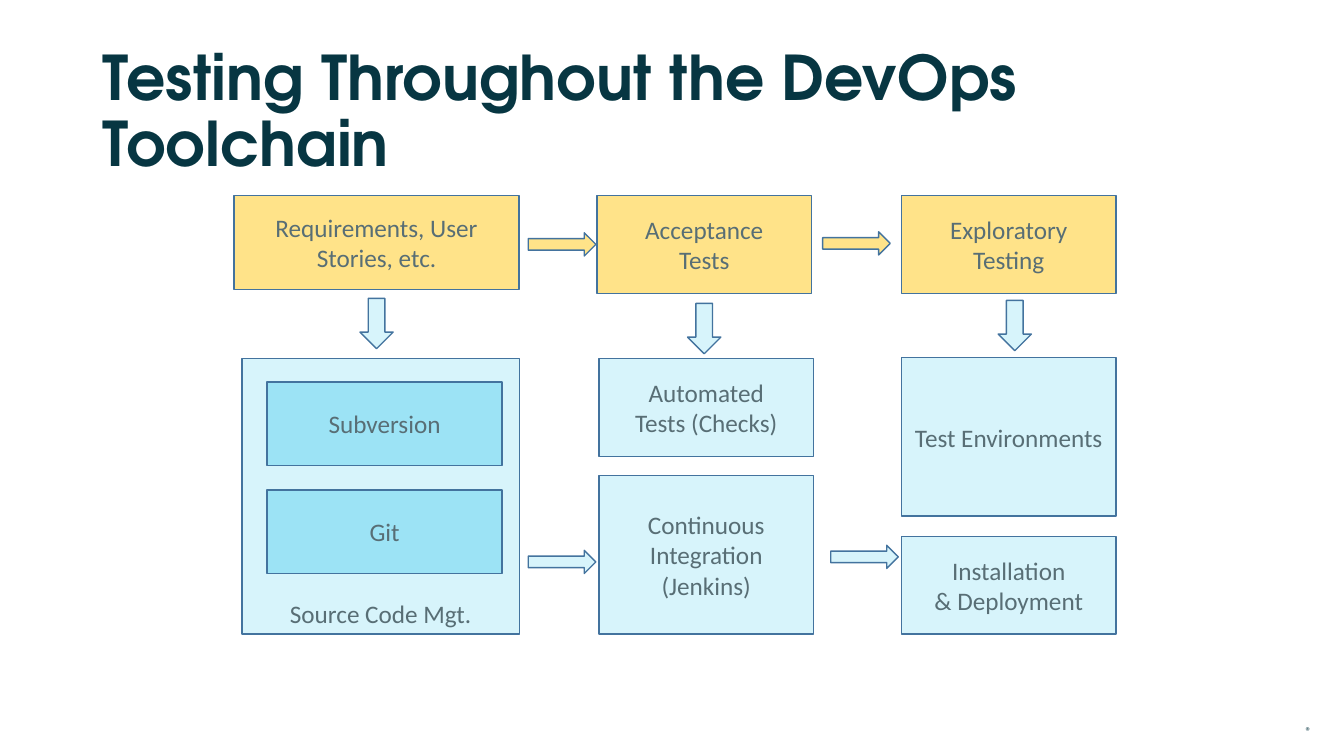
from pptx import Presentation
from pptx.dml.color import RGBColor
from pptx.enum.shapes import MSO_SHAPE
from pptx.enum.text import MSO_ANCHOR, PP_ALIGN
from pptx.util import Inches, Pt

THEME = {
    "title_font": "TeX Gyre Adventor", "body_font": "Calibri",
    "title_size": 44, "body_size": 18, "mark_size": 14,
    "title": "073642", "text": "586E75", "outline": "43739E",
    "yellow": "FFE389", "pale": "D7F4FB", "cyan": "9CE3F5",
}

TITLE = "Testing Throughout the DevOps Toolchain"
MARK = "®"

# Column geometry: left edge and width
COL2, COL3, BOX_W = 5.94, 8.94, 2.13
TOP, SHORT, TALL = 1.94, 0.97, 1.57

# Boxes: paragraphs, left, top, width, height, fill, anchor
MID, LOW = MSO_ANCHOR.MIDDLE, MSO_ANCHOR.BOTTOM
BOXES = [
    (["Source Code Mgt."], 2.4, 3.56, 2.75, 2.73, "pale", LOW),
    (["Requirements, User Stories, etc."], 2.32, TOP, 2.83, 0.93, "yellow", MID),
    (["Acceptance", "Tests"], 5.92, TOP, BOX_W, SHORT, "yellow", MID),
    (["Exploratory", "Testing"], COL3, TOP, BOX_W, SHORT, "yellow", MID),
    (["Automated", "Tests (Checks)"], COL2, 3.56, BOX_W, SHORT, "pale", MID),
    (["Continuous Integration", "(Jenkins)"], COL2, 4.72, BOX_W, TALL, "pale", MID),
    (["Test Environments"], COL3, 3.55, BOX_W, TALL, "pale", MID),
    (["Installation", "& Deployment"], COL3, 5.32, BOX_W, SHORT, "pale", MID),
]

# Repositories stacked inside the source code box
REPOS = ["Subversion", "Git"]
REPO_TOP, REPO_STEP = 3.79, 1.07

# Arrows: left, top, fill
RIGHT_ARROWS = [(5.24, 2.31, "yellow"), (8.16, 2.3, "yellow"),
                (5.24, 5.46, "pale"), (8.24, 5.41, "pale")]
DOWN_ARROWS = [(3.57, 2.96, "pale"), (6.82, 3.01, "pale"), (9.9, 2.98, "pale")]


def color(name):
    return RGBColor.from_string(THEME[name])


def style(p, font, size, tone, bold=False):
    p.font.name, p.font.size, p.font.bold = THEME[font], Pt(THEME[size]), bold
    p.font.color.rgb = color(tone)


def add_shape(s, kind, x, y, w, h, fill):
    sp = s.shapes.add_shape(kind, Inches(x), Inches(y), Inches(w), Inches(h))
    sp.shadow.inherit = False
    sp.fill.solid()
    sp.fill.fore_color.rgb = color(fill)
    sp.line.color.rgb = color("outline")
    sp.line.width = Pt(1)
    return sp


def add_box(s, lines, x, y, w, h, fill, anchor):
    tf = add_shape(s, MSO_SHAPE.RECTANGLE, x, y, w, h, fill).text_frame
    tf.word_wrap = True
    tf.vertical_anchor = anchor
    tf.text = "\n".join(lines)
    for p in tf.paragraphs:
        p.alignment = PP_ALIGN.CENTER
        style(p, "body_font", "body_size", "text")


def add_text(s, text, x, y, w, h):
    tf = s.shapes.add_textbox(Inches(x), Inches(y), Inches(w), Inches(h)).text_frame
    tf.text = text
    return tf


def main():
    prs = Presentation()
    prs.slide_width, prs.slide_height = Inches(13.33), Inches(7.5)
    s = prs.slides.add_slide(prs.slide_layouts[6])

    # Title
    tf = add_text(s, TITLE, 0.92, 0.4, 11.5, 1.45)
    tf.word_wrap = True
    tf.vertical_anchor = MID
    p = tf.paragraphs[0]
    p.line_spacing = 0.9
    style(p, "title_font", "title_size", "title", bold=True)

    # Toolchain stages
    for box in BOXES:
        add_box(s, *box)
    for i, name in enumerate(REPOS):
        add_box(s, [name], 2.65, REPO_TOP + i * REPO_STEP, 2.33, 0.83, "cyan", MID)

    # Flow arrows
    for x, y, fill in RIGHT_ARROWS:
        add_shape(s, MSO_SHAPE.RIGHT_ARROW, x, y, 0.67, 0.23, fill)
    for x, y, fill in DOWN_ARROWS:
        add_shape(s, MSO_SHAPE.DOWN_ARROW, x, y, 0.33, 0.5, fill)

    # Superscript corner mark
    tf = add_text(s, MARK, 12.95, 7.16, 0.18, 0.24)
    tf.margin_left = tf.margin_right = tf.margin_top = tf.margin_bottom = 0
    p = tf.paragraphs[0]
    style(p, "body_font", "mark_size", "title")
    p.runs[0]._r.get_or_add_rPr().set("baseline", "30000")

    prs.save("out.pptx")


if __name__ == "__main__":
    main()
